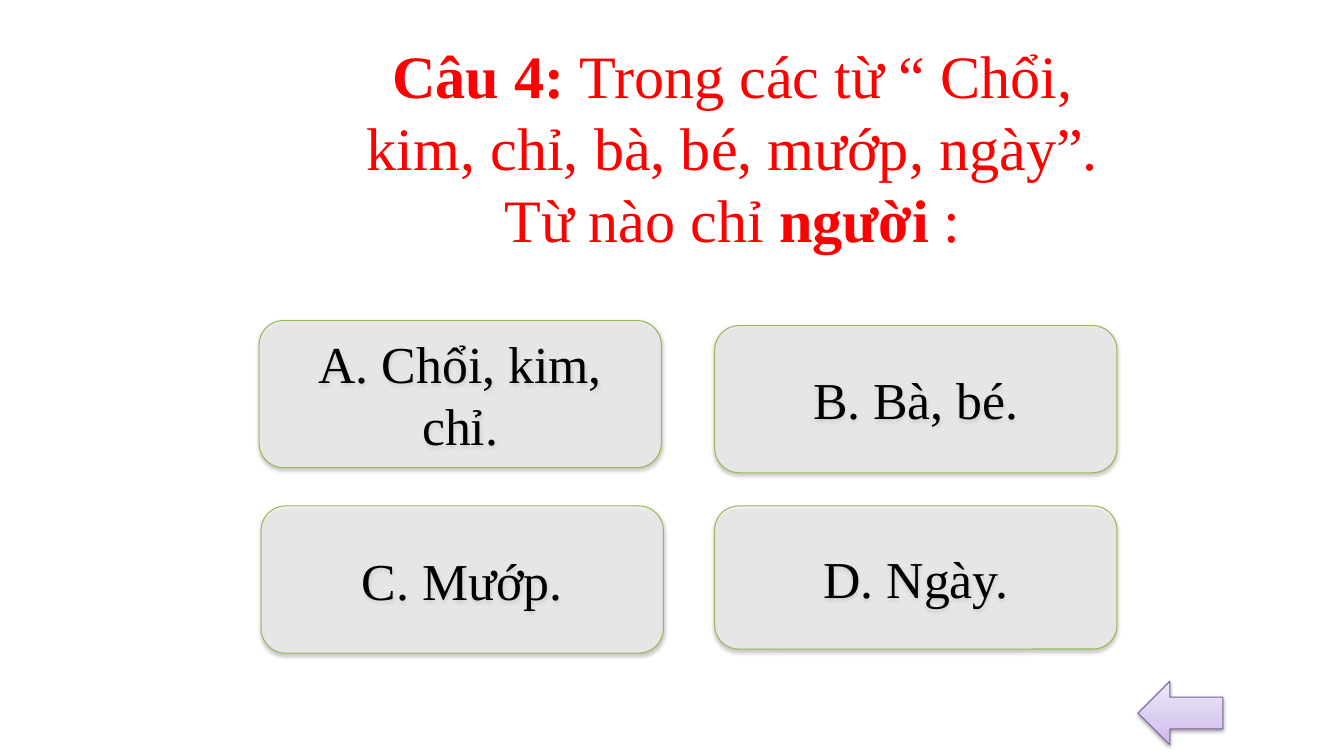
import pptx
import pptx.util
import pptx.dml.color
import pptx.enum.shapes
import pptx.enum.text
import pptx.oxml
import pptx.oxml.ns

Pt = pptx.util.Pt
KINDS = pptx.enum.shapes.MSO_SHAPE
TEXT = pptx.enum.text


def color(code):
    return pptx.dml.color.RGBColor.from_string(code)


def node(body):
    """Turn a DrawingML fragment into an element."""
    space = pptx.oxml.ns.nsdecls("a")
    name, rest = body[1:].split(" ", 1)
    return pptx.oxml.parse_xml(f"<{name} {space} {rest}")


class Quiz:
    font = "Times New Roman"

    def __init__(self, deck):
        self.deck = deck
        self.slide = deck.slides.add_slide(deck.slide_layouts[5])

    def area(self, left, top, width, height):
        """Lengths are percent of the slide's width and height."""
        wide, high = self.deck.slide_width, self.deck.slide_height
        return [round(share * full / 100) for share, full in
                zip((left, top, width, height), (wide, high, wide, high))]

    def label(self, shape, parts, size, ink, anchor):
        """Fill one centred paragraph with (text, bold) parts."""
        frame = shape.text_frame
        frame.word_wrap = True
        frame.vertical_anchor = anchor
        frame.margin_left = frame.margin_right = pptx.util.Inches(0.13)
        frame.margin_top = frame.margin_bottom = pptx.util.Inches(0.07)
        line = frame.paragraphs[0]
        line.alignment = TEXT.PP_ALIGN.CENTER
        for text, bold in parts:
            run = line.add_run()
            run.text = text
            run.font.name = self.font
            run.font.size = Pt(size)
            run.font.bold = bold
            run.font.color.rgb = color(ink)

    def title(self, area, parts):
        shape = self.slide.shapes.title
        shape.left, shape.top, shape.width, shape.height = self.area(*area)
        self.label(shape, parts, 43, "FF0000", TEXT.MSO_ANCHOR.TOP)
        shape.text_frame.auto_size = TEXT.MSO_AUTO_SIZE.SHAPE_TO_FIT_TEXT

    def shape(self, kind, area, edge):
        """Add an outlined shape with a soft shadow below it."""
        shape = self.slide.shapes.add_shape(kind, *self.area(*area))
        shape.fill.solid()
        shape.fill.fore_color.rgb = color("FFFFFF")
        shape.line.color.rgb = color(edge)
        shape.line.width = Pt(0.75)
        shape.shadow.inherit = False
        props = shape._element.spPr
        props.find(pptx.oxml.ns.qn("a:effectLst")).append(node(
            f'<a:outerShdw blurRad="{Pt(3.1)}" dist="{Pt(1.6)}" dir="5400000" '
            'rotWithShape="0"><a:srgbClr val="000000"><a:alpha val="38000"/>'
            '</a:srgbClr></a:outerShdw>'))
        return shape

    def card(self, area, text):
        shape = self.shape(KINDS.ROUNDED_RECTANGLE, area, "98B955")
        fill = shape._element.spPr.find(pptx.oxml.ns.qn("a:solidFill"))
        fill[0].append(node('<a:alpha val="50000"/>'))
        self.label(shape, [(text, False)], 37, "000000",
                   TEXT.MSO_ANCHOR.MIDDLE)

    def arrow(self, area, stops):
        shape = self.shape(KINDS.LEFT_ARROW, area, "7D60A0")
        marks = "".join(f'<a:gs pos="{spot * 1000}"><a:srgbClr val="{code}"/>'
                        '</a:gs>' for spot, code in stops)
        props = shape._element.spPr
        props.replace(props.find(pptx.oxml.ns.qn("a:solidFill")), node(
            f'<a:gradFill rotWithShape="1"><a:gsLst>{marks}</a:gsLst>'
            '<a:lin ang="16200000" scaled="0"/></a:gradFill>'))


def main():
    deck = pptx.Presentation()
    deck.slide_width = pptx.util.Inches(13.33)
    deck.slide_height = pptx.util.Inches(7.5)
    quiz = Quiz(deck)

    # Back arrow
    quiz.arrow((84.68, 90.13, 6.3, 8.4),
               [(0, "C9B5E8"), (35, "D8CBEE"), (100, "F0EAF9")])

    # Question
    quiz.title((24.38, 4.13, 60.23, 30.53), [
        ("Câu 4: ", True),
        ("Trong các từ “ Chổi, kim, chỉ, bà, bé, mướp, ngày”. Từ nào chỉ ",
         False),
        ("người", True),
        (" :", False)])

    # Answers: left, top, height, text
    for left, top, high, text in [
            (19.28, 42.4, 19.47, "A. Chổi, kim, chỉ."),
            (53.18, 43.07, 19.47, "B. Bà, bé."),
            (19.43, 66.93, 19.47, "C. Mướp."),
            (53.18, 66.93, 18.93, "D. Ngày.")]:
        quiz.card((left, top, 29.93, high), text)

    deck.save("out.pptx")


if __name__ == "__main__":
    main()
